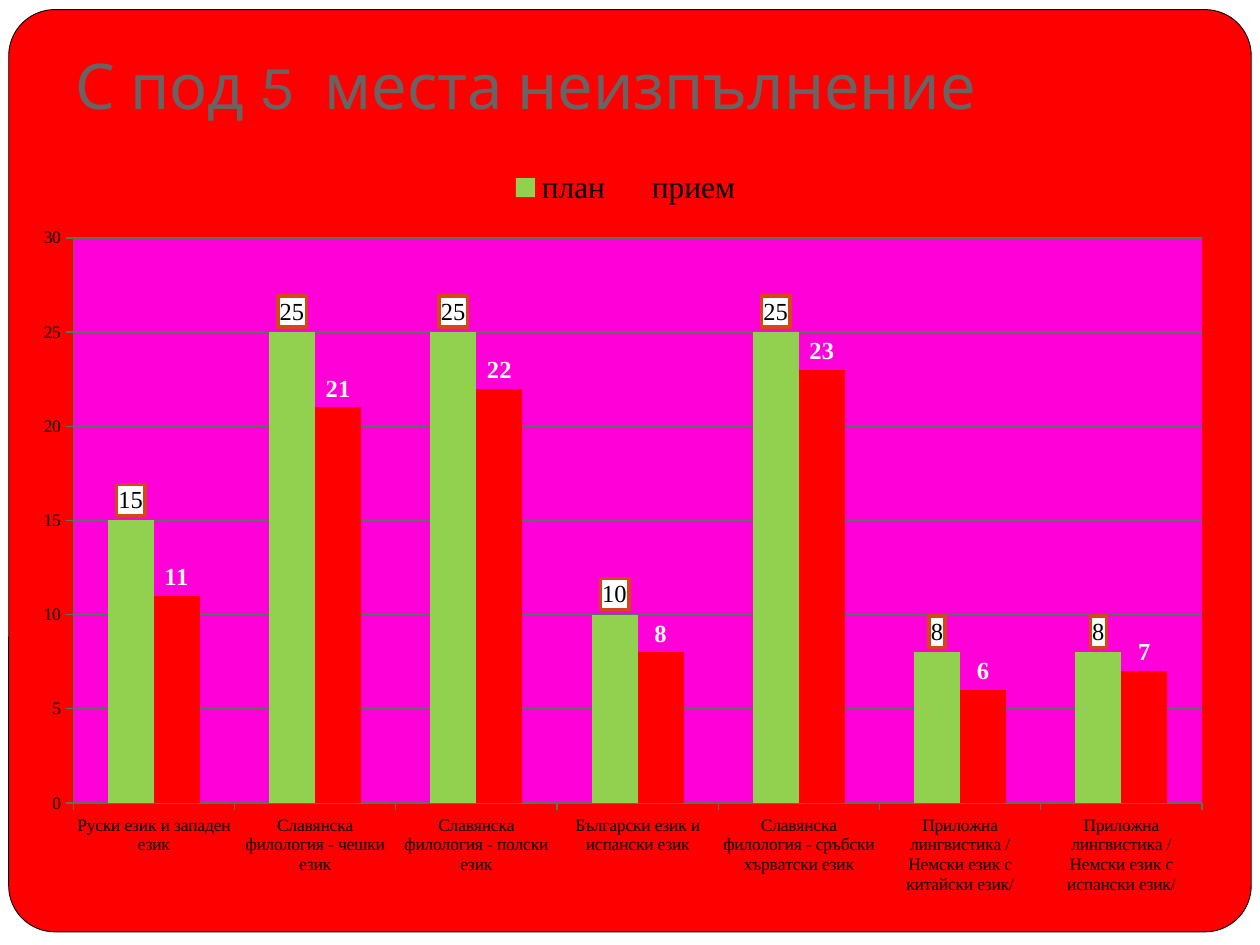
from lxml import etree
from pptx import Presentation
from pptx import util as u
from pptx.chart.data import CategoryChartData
from pptx.dml.color import RGBColor
from pptx.enum import chart as ch, shapes, text
from pptx.oxml import parse_xml
from pptx.oxml.ns import qn

Pt = u.Pt

RED = RGBColor(0xFF, 0x00, 0x00)
WHITE = RGBColor(0xFF, 0xFF, 0xFF)
BLACK = RGBColor(0x00, 0x00, 0x00)
TITLE_GREY = RGBColor(0x69, 0x64, 0x64)
GRID_GREY = RGBColor(0x5C, 0x72, 0x5C)
GREEN = RGBColor(0x92, 0xD0, 0x50)
MAGENTA = RGBColor(0xFF, 0x00, 0xFF)
LABEL_EDGE = RGBColor(0xD3, 0x48, 0x17)

SERIF = "Times New Roman"
NS = ('xmlns:c="http://schemas.openxmlformats.org/drawingml/2006/chart" '
      'xmlns:a="http://schemas.openxmlformats.org/drawingml/2006/main"')

PROGRAMMES = [
    "Руски език и западен език",
    "Славянска филология - чешки език",
    "Славянска филология - полски език",
    "Български език и испански език",
    "Славянска филология - сръбски хърватски език",
    "Приложна лингвистика /Немски език с китайски език/",
    "Приложна лингвистика /Немски език с испански език/",
]
PLAN = [15, 25, 25, 10, 25, 8, 8]
ADMITTED = [11, 21, 22, 8, 23, 6, 7]


def style_font(font, size, color, name=SERIF, bold=False):
    font.size, font.name, font.bold = Pt(size), name, bold
    font.color.rgb = color


def add_panel(slide, kind, box, fill, edge=None):
    panel = slide.shapes.add_shape(kind, *map(Pt, box))
    panel.shadow.inherit = False
    panel.fill.solid()
    panel.fill.fore_color.rgb = fill
    if edge is None:
        panel.line.fill.background()
    else:
        panel.line.color.rgb = edge
        panel.line.width = Pt(0.5)
    return panel


def format_title(slide, wording):
    title = slide.shapes.title
    title.left, title.top, title.width, title.height = map(Pt, (36, 21.6, 648, 55.4))
    frame = title.text_frame
    frame.text = wording
    frame.auto_size = text.MSO_AUTO_SIZE.NONE
    frame.word_wrap = True
    frame.vertical_anchor = text.MSO_ANCHOR.BOTTOM
    frame.margin_bottom = Pt(7.2)
    line = frame.paragraphs[0]
    line.alignment = text.PP_ALIGN.LEFT
    style_font(line.runs[0].font, 36, TITLE_GREY, "Karla")
    # Bring the title in front of the panels
    slide.shapes._spTree.append(title._element)


def style_axis(axis):
    axis.major_tick_mark = ch.XL_TICK_MARK.OUTSIDE
    axis.minor_tick_mark = ch.XL_TICK_MARK.NONE
    axis.format.line.color.rgb = GRID_GREY
    style_font(axis.tick_labels.font, 10, BLACK)


def style_series(series, fill, label_color, bold=False):
    series.format.fill.solid()
    series.format.fill.fore_color.rgb = fill
    series.invert_if_negative = False
    labels = series.data_labels
    labels.show_value = True
    labels.position = ch.XL_LABEL_POSITION.OUTSIDE_END
    style_font(labels.font, 14, label_color, bold=bold)
    return labels


def box_labels(labels, fill, edge):
    box = parse_xml(
        f'<c:spPr {NS}><a:solidFill><a:srgbClr val="{fill}"/></a:solidFill>'
        f'<a:ln w="{Pt(2)}"><a:solidFill><a:srgbClr val="{edge}"/></a:solidFill></a:ln></c:spPr>')
    labels._element.find(qn("c:txPr")).addprevious(box)


def format_plot_area(chart, fill, alpha, x, y, w, h):
    area = chart._chartSpace.chart.plotArea
    for old in area.findall(qn("c:layout")):
        area.remove(old)
    area.insert(0, parse_xml(
        f'<c:layout {NS}><c:manualLayout><c:layoutTarget val="inner"/>'
        f'<c:xMode val="edge"/><c:yMode val="edge"/><c:x val="{x}"/><c:y val="{y}"/>'
        f'<c:w val="{w}"/><c:h val="{h}"/></c:manualLayout></c:layout>'))
    props = etree.SubElement(area, qn("c:spPr"))
    solid = etree.SubElement(props, qn("a:solidFill"))
    color = etree.SubElement(solid, qn("a:srgbClr"), val=str(fill))
    etree.SubElement(color, qn("a:alpha"), val=str(alpha * 1000))


def add_admissions_chart(slide):
    data = CategoryChartData()
    data.categories = PROGRAMMES
    data.add_series("план", PLAN)
    data.add_series("прием", ADMITTED)
    chart = slide.shapes.add_chart(
        ch.XL_CHART_TYPE.COLUMN_CLUSTERED,
        *map(Pt, (14.4, 88.6, 686.2, 430.6)), data).chart
    chart.has_title = False
    style_font(chart.font, 10, BLACK)

    # Legend
    chart.has_legend = True
    chart.legend.position = ch.XL_LEGEND_POSITION.TOP
    chart.legend.include_in_layout = False
    style_font(chart.legend.font, 18, BLACK)

    # Axes
    style_axis(chart.category_axis)
    values = chart.value_axis
    style_axis(values)
    values.minimum_scale, values.maximum_scale, values.major_unit = 0, 30, 5
    values.has_major_gridlines = True
    values.major_gridlines.format.line.color.rgb = GRID_GREY

    # Columns and their labels
    columns = chart.plots[0]
    columns.gap_width, columns.overlap = 150, 0
    columns.vary_by_categories = False
    plan, admitted = columns.series
    box_labels(style_series(plan, GREEN, BLACK), WHITE, LABEL_EDGE)
    style_series(admitted, RED, WHITE, bold=True)
    format_plot_area(chart, MAGENTA, 85, 0.04, 0.11, 0.94, 0.75)


def main():
    deck = Presentation()
    deck.slide_width, deck.slide_height = Pt(720), Pt(540)
    slide = deck.slides.add_slide(deck.slide_layouts[5])
    slide.background.fill.solid()
    slide.background.fill.fore_color.rgb = RED

    # White page with a rounded red panel
    add_panel(slide, shapes.MSO_SHAPE.RECTANGLE, (0, 0, 720, 540), WHITE)
    panel = add_panel(slide, shapes.MSO_SHAPE.ROUNDED_RECTANGLE,
                      (5, 5.5, 710, 527), RED, BLACK)
    panel.adjustments[0] = 0.05

    format_title(slide, "С под 5  места неизпълнение")
    add_admissions_chart(slide)
    deck.save("out.pptx")


if __name__ == "__main__":
    main()
